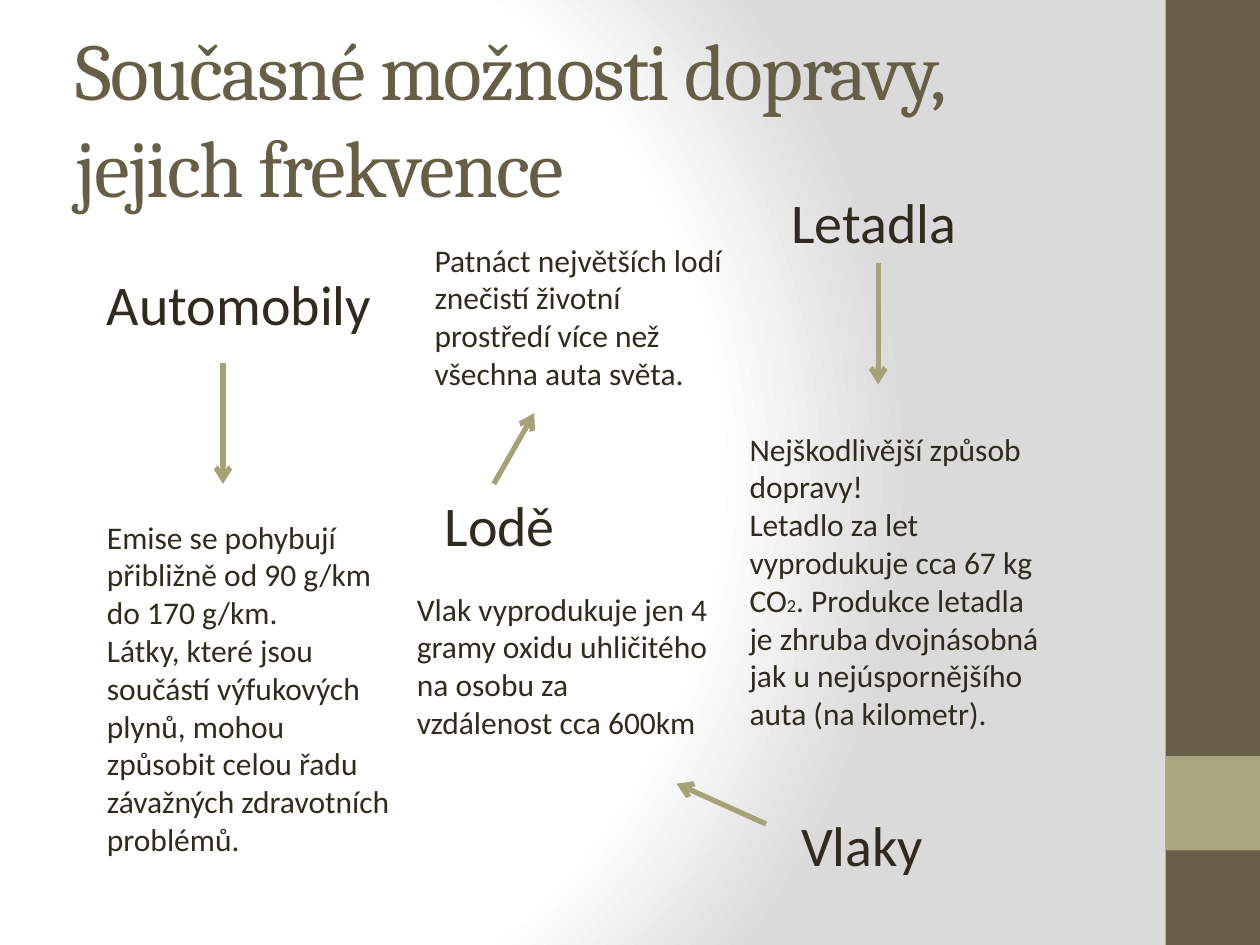
from dataclasses import dataclass

from lxml import etree
from pptx import Presentation
from pptx.dml.color import RGBColor
from pptx.enum.shapes import MSO_CONNECTOR, MSO_SHAPE
from pptx.enum.text import MSO_ANCHOR, MSO_AUTO_SIZE, PP_ALIGN
from pptx.oxml import parse_xml
from pptx.oxml.ns import qn
from pptx.util import Inches, Pt

STRAIGHT = MSO_CONNECTOR.STRAIGHT
RECTANGLE = MSO_SHAPE.RECTANGLE
MIDDLE = MSO_ANCHOR.MIDDLE
NO_AUTOFIT, GROW = MSO_AUTO_SIZE.NONE, MSO_AUTO_SIZE.SHAPE_TO_FIT_TEXT
LEFT = PP_ALIGN.LEFT


@dataclass(frozen=True)
class Theme:
    title_font: str = "Cambria"
    text_font: str = "Calibri"
    brown: RGBColor = RGBColor(0x67, 0x5E, 0x47)
    olive: RGBColor = RGBColor(0xA9, 0xA5, 0x7C)
    arrow: RGBColor = RGBColor(0xA6, 0xA2, 0x78)
    text: RGBColor = RGBColor(0x2F, 0x2B, 0x20)
    title_size: float = 46
    heading_size: float = 32
    body_size: float = 18
    index_size: float = 10.5
    arrow_width: float = 3


theme = Theme()


def style(paragraph, font_name, size, color):
    paragraph.alignment = LEFT
    paragraph.font.name = font_name
    paragraph.font.size = Pt(size)
    paragraph.font.color.rgb = color


def add_text(slide, left, top, width, height, paragraphs, size):
    """Add a text box; a piece between two bars is set as a small index."""
    box = slide.shapes.add_textbox(Inches(left), Inches(top), Inches(width), Inches(height))
    frame = box.text_frame
    frame.word_wrap = True
    frame.auto_size = GROW
    for number, text in enumerate(paragraphs):
        paragraph = frame.add_paragraph() if number else frame.paragraphs[0]
        style(paragraph, theme.text_font, size, theme.text)
        for position, piece in enumerate(text.split("|")):
            run = paragraph.add_run()
            run.text = piece
            if position % 2:
                run.font.size = Pt(theme.index_size)


prs = Presentation()
prs.slide_width, prs.slide_height = Inches(10), Inches(7.5)
slide = prs.slides.add_slide(prs.slide_layouts[5])

# Background: circular gradient
slide.background.fill.gradient()
gradient = slide.element.find(".//" + qn("a:gradFill"))
gradient.getparent().replace(gradient, parse_xml(
    '<a:gradFill xmlns:a="http://schemas.openxmlformats.org/drawingml/2006/main" rotWithShape="1">'
    '<a:gsLst><a:gs pos="0"><a:srgbClr val="FFFFFF"/></a:gs>'
    '<a:gs pos="75000"><a:srgbClr val="FFFFFF"/></a:gs>'
    '<a:gs pos="100000"><a:srgbClr val="DADADA"/></a:gs></a:gsLst>'
    '<a:path path="circle"><a:fillToRect l="20000" t="50000" r="100000" b="50000"/></a:path>'
    '</a:gradFill>'))

# Side band with its accent square
for top, height, color in [(0, 7.5, theme.brown), (6, 0.75, theme.olive)]:
    band = slide.shapes.add_shape(
        RECTANGLE, Inches(9.25), Inches(top), Inches(0.75), Inches(height))
    band.fill.solid()
    band.fill.fore_color.rgb = color
    band.line.fill.background()
    band.shadow.inherit = False

# Title
title = slide.shapes.title
title.left, title.top = Inches(0.5), Inches(0.3)
title.width, title.height = Inches(8.33), Inches(1.25)
title.text_frame.text = "Současné možnosti dopravy, jejich frekvence"
title.text_frame.word_wrap = True
title.text_frame.auto_size = NO_AUTOFIT
title.text_frame.vertical_anchor = MIDDLE
heading = title.text_frame.paragraphs[0]
style(heading, theme.title_font, theme.title_size, theme.brown)
heading.runs[0].font.element.set("spc", "-100") if hasattr(
    heading.runs[0].font, "element") else heading.runs[0]._r.get_or_add_rPr().set("spc", "-100")

# Means of transport
for left, top, name in [
    (0.75, 2.09, "Automobily"),
    (3.43, 3.84, "Lodě"),
    (6.26, 6.38, "Vlaky"),
    (6.18, 1.44, "Letadla"),
]:
    add_text(slide, left, top, 2.36, 0.64, [name], theme.heading_size)

# Facts about each of them
for left, top, height, facts in [
    (0.75, 4.06, 2.83, [
        "Emise se pohybují přibližně od 90 g/km do 170 g/km.",
        "Látky, které jsou součástí výfukových plynů, mohou "
        "způsobit celou řadu závažných zdravotních problémů."]),
    (3.35, 1.86, 1.31, [
        "Patnáct největších lodí znečistí životní prostředí více než všechna auta světa."]),
    (5.85, 3.36, 2.52, [
        "Nejškodlivější způsob dopravy!",
        "Letadlo za let vyprodukuje cca 67 kg CO|2|. Produkce letadla "
        "je zhruba dvojnásobná jak u nejúspornějšího auta (na kilometr)."]),
    (3.21, 4.63, 1.31, [
        "Vlak vyprodukuje jen 4 gramy oxidu uhličitého na osobu za vzdálenost cca 600km"]),
]:
    add_text(slide, left, top, 2.52, height, facts, theme.body_size)

# Arrows from each means of transport to its facts
for start_x, start_y, end_x, end_y in [
    (1.77, 2.88, 1.77, 3.84),
    (3.92, 3.84, 4.24, 3.28),
    (6.97, 2.09, 6.97, 3.05),
    (6.08, 6.54, 5.37, 6.22),
]:
    arrow = slide.shapes.add_connector(
        STRAIGHT, Inches(start_x), Inches(start_y), Inches(end_x), Inches(end_y))
    arrow.line.color.rgb = theme.arrow
    arrow.line.width = Pt(theme.arrow_width)
    properties = arrow.element.spPr
    etree.SubElement(properties.find(qn("a:ln")), qn("a:tailEnd"), type="arrow")
    etree.SubElement(properties, qn("a:effectLst"))

prs.save("out.pptx")
